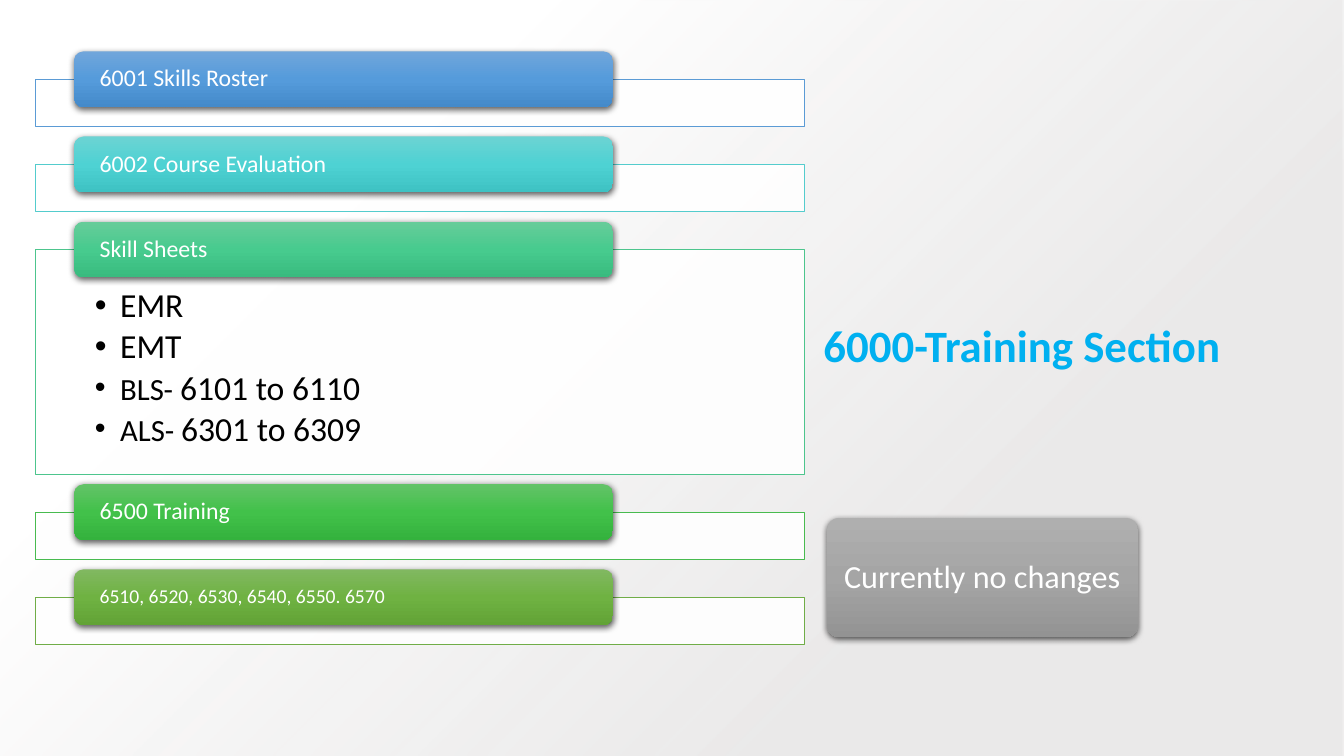
from lxml.etree import SubElement
from pptx import Presentation
from pptx.dml.color import RGBColor
from pptx.enum.shapes import MSO_SHAPE
from pptx.enum.text import MSO_ANCHOR, PP_ALIGN
from pptx.oxml import parse_xml
from pptx.oxml.ns import nsdecls, qn
from pptx.util import Pt

DOWNWARD = '<a:lin ang="5400000" scaled="0"/>'
FROM_CORNER = '<a:path path="circle"><a:fillToRect l="100000" t="100000"/></a:path>'
SHADOW = (
    f'<a:effectLst {nsdecls("a")}>'
    '<a:outerShdw blurRad="57150" dist="19050" dir="5400000" algn="ctr" rotWithShape="0">'
    '<a:srgbClr val="000000"><a:alpha val="63000"/></a:srgbClr>'
    '</a:outerShdw></a:effectLst>'
)


def add_gradient_shape(kind, left, top, width, height, stops, direction):
    shape = page.shapes.add_shape(kind, Pt(left), Pt(top), Pt(width), Pt(height))
    shape.line.fill.background()
    stop_xml = "".join(
        f'<a:gs pos="{place * 1000}"><a:srgbClr val="{color}">'
        f'<a:alpha val="{alpha * 1000}"/></a:srgbClr></a:gs>'
        for place, color, alpha in stops
    )
    fill = parse_xml(
        f'<a:gradFill {nsdecls("a")} rotWithShape="1">'
        f'<a:gsLst>{stop_xml}</a:gsLst>{direction}</a:gradFill>'
    )
    shape.element.spPr.find(qn("a:prstGeom")).addnext(fill)
    return shape


def add_span(para, text, size, color, bold=False):
    para.line_spacing = 0.9
    span = para.add_run()
    span.text = text
    span.font.name = "Calibri"
    span.font.size = Pt(size)
    span.font.bold = bold
    span.font.color.rgb = RGBColor.from_string(color)


deck = Presentation()
deck.slide_width = Pt(960)
deck.slide_height = Pt(540)
page = deck.slides.add_slide(deck.slide_layouts[5])

backdrop = add_gradient_shape(
    MSO_SHAPE.RECTANGLE, 0, 0, 960, 540,
    [(28, "E7E6E6", 84), (74, "FFFFFF", 100)], FROM_CORNER,
)
backdrop.shadow.inherit = False

title = page.shapes.title
title.element.addprevious(backdrop.element)
title.left, title.top, title.width, title.height = Pt(581), Pt(196.6), Pt(353.5), Pt(104.4)
title.text_frame.vertical_anchor = MSO_ANCHOR.MIDDLE
title_para = title.text_frame.paragraphs[0]
title_para.alignment = PP_ALIGN.LEFT
add_span(title_para, "6000-Training Section", 32, "00B0F0", True)

skill_sheets = [
    [("EMR", 24)],
    [("EMT", 24)],
    [("BLS- ", 22), ("6101 to 6110", 24)],
    [("ALS- ", 22), ("6301 to 6309", 24)],
]
sections = [
    ("6001 Skills Roster", 17, "5B9BD5", ["71A6DB", "559BDB", "448ACA"], 33.8, []),
    ("6002 Course Evaluation", 17, "54CCCD", ["6CD3D3", "4ED2D3", "3EC2C3"], 33.8, []),
    ("Skill Sheets", 17, "4DC58D", ["67CC9A", "47CB8E", "39BB7F"], 160.6, skill_sheets),
    ("6500 Training", 17, "48BB4F", ["63C368", "42C14A", "34B23D"], 33.8, []),
    ("6510, 6520, 6530, 6540, 6550. 6570", 14, "70AD47", ["81B861", "6FB242", "62A336"], 33.8, []),
]
tiles = []
panel_top = 56.7
for heading, size, outline, colors, panel_height, items in sections:
    panel = page.shapes.add_shape(
        MSO_SHAPE.RECTANGLE, Pt(25.2), Pt(panel_top), Pt(549.6), Pt(panel_height)
    )
    panel.shadow.inherit = False
    panel.fill.solid()
    panel.fill.fore_color.rgb = RGBColor.from_string("FFFFFF")
    panel_color = panel.element.spPr.find(qn("a:solidFill"))[0]
    SubElement(panel_color, qn("a:alpha"), val="90000")
    panel.line.color.rgb = RGBColor.from_string(outline)
    panel.line.width = Pt(0.5)

    frame = panel.text_frame
    frame.vertical_anchor = MSO_ANCHOR.TOP
    frame.margin_left = frame.margin_right = Pt(42.6)
    frame.margin_top, frame.margin_bottom = Pt(28.1), Pt(13.7)
    for index, parts in enumerate(items):
        para = frame.paragraphs[0] if index == 0 else frame.add_paragraph()
        para.alignment = PP_ALIGN.LEFT
        para.space_after = Pt(3.4)
        for text, text_size in parts:
            add_span(para, text, text_size, "000000")
        properties = para._p.get_or_add_pPr()
        properties.set("marL", str(Pt(18)))
        properties.set("indent", str(Pt(-18)))
        SubElement(properties, qn("a:buFont"), typeface="Arial")
        SubElement(properties, qn("a:buChar"), char="•")

    tiles.append((heading, size, colors, (53, panel_top - 20, 384.7, 39.9), PP_ALIGN.LEFT, 16.2))
    panel_top += panel_height + 27

    if heading == sections[-1][0]:
        tiles.append((
            "Currently no changes", 23, ["AFAFAF", "A5A5A5", "939393"],
            (590.8, 370, 222, 85.2), PP_ALIGN.CENTER, 6,
        ))

for text, size, colors, area, alignment, inset in tiles:
    stops = [(place, color, 100) for place, color in zip((0, 50, 100), colors)]
    tile = add_gradient_shape(MSO_SHAPE.ROUNDED_RECTANGLE, *area, stops, DOWNWARD)
    tile.element.spPr.append(parse_xml(SHADOW))
    if alignment == PP_ALIGN.CENTER:
        tile.adjustments[0] = 0.1
    frame = tile.text_frame
    frame.word_wrap = True
    frame.vertical_anchor = MSO_ANCHOR.MIDDLE
    frame.margin_left = frame.margin_right = Pt(inset)
    frame.margin_top = frame.margin_bottom = Pt(2)
    para = frame.paragraphs[0]
    para.alignment = alignment
    add_span(para, text, size, "FFFFFF")

deck.save("out.pptx")
